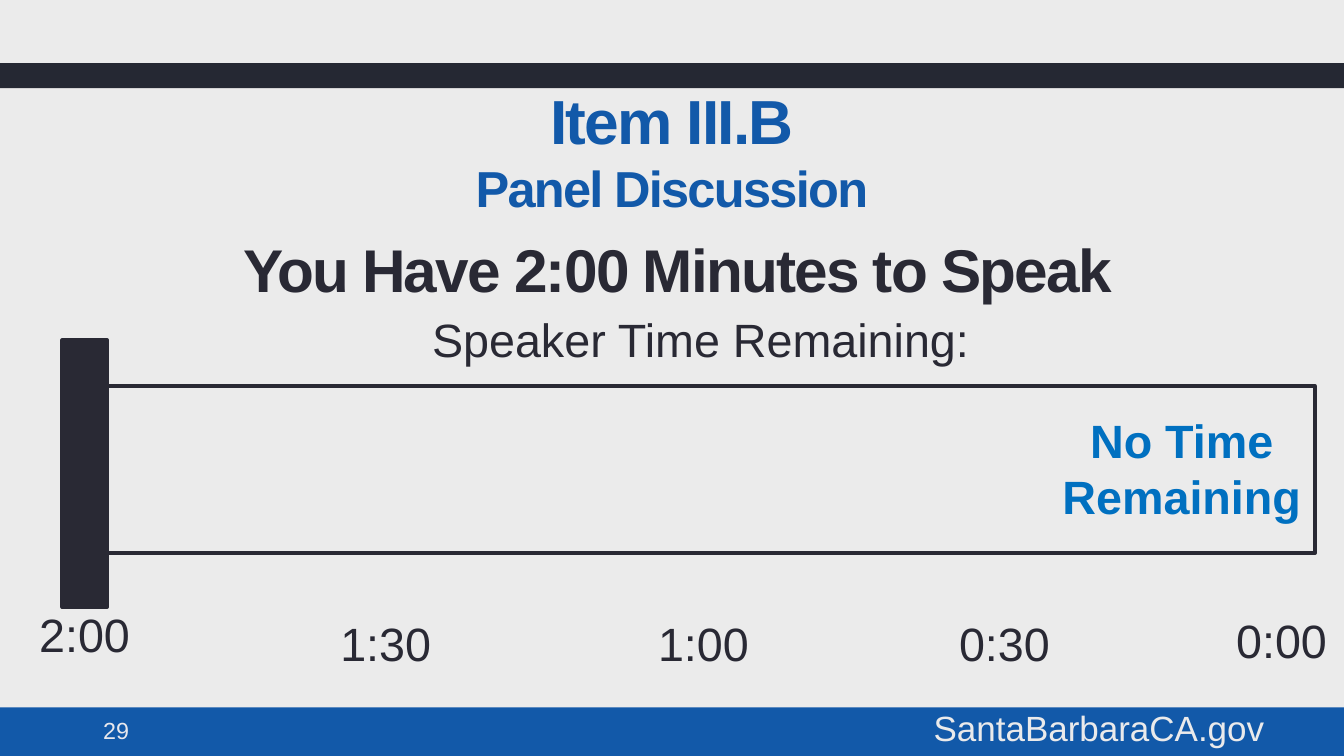
from pptx import Presentation
from pptx import util as u
from pptx.dml import color
from pptx.enum import shapes, text

INK, BLUE, PALE = "292934", "1259A9", "EBEBEB"
LEFT, MID, RIGHT = text.PP_ALIGN.LEFT, text.PP_ALIGN.CENTER, text.PP_ALIGN.RIGHT
WIDE, HIGH = 691.2, 388.8


def rgb(code):
    return color.RGBColor.from_string(code)


class Deck:
    """Holds the style and the current slide."""

    def __init__(self, font="Arial"):
        self.font = font
        self.prs = Presentation()
        self.prs.slide_width, self.prs.slide_height = u.Pt(WIDE), u.Pt(HIGH)

    def page(self, back):
        self.slide = self.prs.slides.add_slide(self.prs.slide_layouts[6])
        fill = self.slide.background.fill
        fill.solid()
        fill.fore_color.rgb = rgb(back)

    def rect(self, x, y, w, h, fill, line=None):
        box = self.slide.shapes.add_shape(
            shapes.MSO_SHAPE.RECTANGLE, *map(u.Pt, (x, y, w, h)))
        box.shadow.inherit = False
        box.fill.solid()
        box.fill.fore_color.rgb = rgb(fill)
        if line:
            box.line.color.rgb = rgb(line)
            box.line.width = u.Pt(2.08)
        else:
            box.line.fill.background()

    def text(self, x, y, w, h, rows, tint=INK, align=MID, bold=False,
             space=None, middle=False):
        """Each row is a (wording, size) pair."""
        box = self.slide.shapes.add_textbox(*map(u.Pt, (x, y, w, h)))
        frame = box.text_frame
        frame.word_wrap = True
        if middle:
            frame.vertical_anchor = text.MSO_ANCHOR.MIDDLE
        for i, (words, size) in enumerate(rows):
            para = frame.add_paragraph() if i else frame.paragraphs[0]
            para.alignment = align
            run = para.add_run()
            run.text = words
            run.font.name, run.font.size = self.font, u.Pt(size)
            run.font.bold = bold
            run.font.color.rgb = rgb(tint)
            if space:
                run.font._element.set("spc", str(round(space * 100)))


def main():
    deck = Deck()
    deck.page(PALE)

    # Top band and footer
    deck.rect(0, 32.4, WIDE, 13, "252833")
    deck.rect(0, 363.8, WIDE, 25, BLUE)
    deck.text(431.3, 360, 226, 28.8, [("SantaBarbaraCA.gov", 18)],
              "EAEAEB", RIGHT, middle=True)
    deck.text(46, 365, 61.2, 21, [("29", 12)], "E8E8ED", LEFT, middle=True)

    # Time bar with its marker
    deck.text(195, 156.2, 330.5, 36, [("Speaker Time Remaining:", 24)])
    deck.rect(43.2, 198.6, 633, 85.8, PALE, INK)
    deck.rect(32.1, 175, 23, 137.2, INK, INK)
    deck.text(538.6, 208, 138.2, 65.5, [("No Time Remaining", 24)],
              "0070C0", bold=True)

    # Time labels, placed by their centres
    for label, mid, top in (("2:00", 43.5, 308.2), ("1:30", 198.4, 312.5),
                            ("1:00", 361.8, 312.5), ("0:30", 516.6, 312.5),
                            ("0:00", 659.1, 311)):
        deck.text(mid - 32, top, 64, 36, [(label, 24)])

    # Headings
    deck.text(118.1, 115.9, 560, 45.4, [("You Have 2:00 Minutes to Speak", 31)],
              align=text.PP_ALIGN.JUSTIFY, bold=True, space=-0.9)
    deck.text(0, 38.9, WIDE, 138.2,
              [("Item III.B", 32), ("Panel Discussion", 26)],
              BLUE, bold=True, space=-0.9)

    deck.prs.save("out.pptx")


if __name__ == "__main__":
    main()
